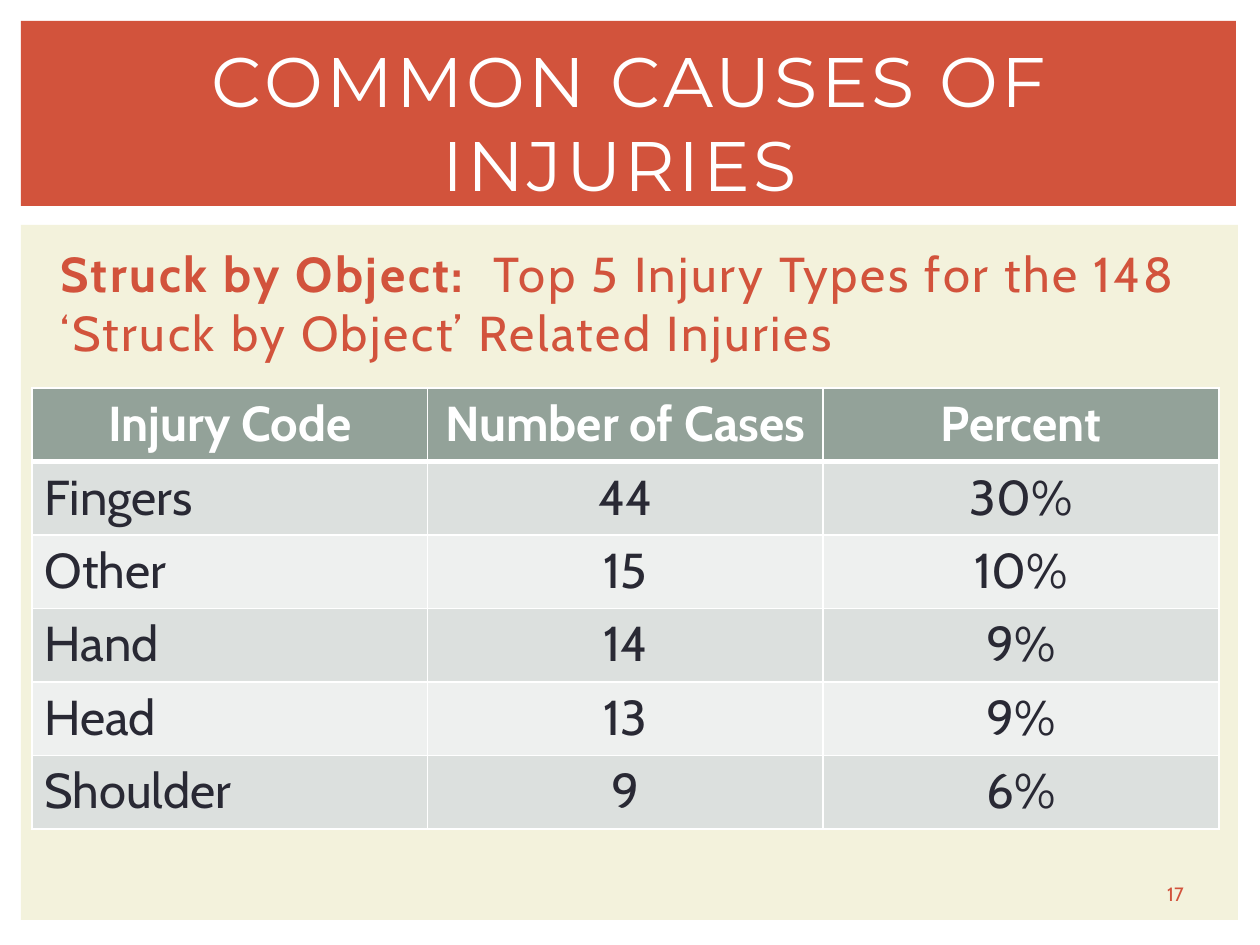
import pptx
import pptx.util
import pptx.dml.color
import pptx.enum.shapes
import pptx.enum.text
import pptx.oxml.ns
import lxml.etree

PX = 914400 // 126
COLORS = {
    "white": "FFFFFF", "cream": "F3F2DC", "red": "D2533C", "ink": "292934",
    "header": "93A299", "band_dark": "DCE0DE", "band_light": "EEF0EF",
}
ALIGN = pptx.enum.text.PP_ALIGN
ANCHOR = pptx.enum.text.MSO_ANCHOR
ROWS = [
    ("Injury Code", "Number of Cases", "Percent"),
    ("Fingers", "44", "30%"),
    ("Other", "15", "10%"),
    ("Hand", "14", "9%"),
    ("Head", "13", "9%"),
    ("Shoulder", "9", "6%"),
]


def emu(*lengths):
    return [pptx.util.Emu(n * PX) for n in lengths]


def rgb(name):
    return pptx.dml.color.RGBColor.from_string(COLORS[name])


def style_run(r, size, color, font="Cabin", bold=False, spacing=0):
    r.font.size = pptx.util.Pt(size)
    r.font.name = font
    r.font.bold = bold
    r.font.color.rgb = rgb(color)
    if spacing:
        r.font._element.set("spc", str(int(spacing * 100)))


def add_panel(s, box, color):
    sp = s.shapes.add_shape(pptx.enum.shapes.MSO_SHAPE.RECTANGLE, *emu(*box))
    sp.shadow.inherit = False
    sp.fill.solid()
    sp.fill.fore_color.rgb = rgb(color)
    sp.line.fill.background()


def add_text(s, box, parts, align=ALIGN.LEFT, anchor=ANCHOR.MIDDLE, **style):
    tf = s.shapes.add_textbox(*emu(*box)).text_frame
    tf.word_wrap = True
    tf.vertical_anchor = anchor
    p = tf.paragraphs[0]
    p.alignment = align
    for text, bold in parts:
        r = p.add_run()
        r.text = text
        style_run(r, bold=bold, **style)
    return p


def add_title(s, box):
    x, y, w, h = box
    add_panel(s, box, "red")
    add_text(s, (x + 32, y + 28, w - 59, h - 41),
             [("COMMON CAUSES OF INJURIES ", False)], ALIGN.CENTER,
             size=40, color="white", font="Montserrat", spacing=2)


def set_borders(cell, bottom):
    tcPr = cell._tc.get_or_add_tcPr()
    for i, (side, width) in enumerate(zip("LRTB", (1, 1, 1, bottom))):
        ln = lxml.etree.Element(pptx.oxml.ns.qn(f"a:ln{side}"),
                                w=str(pptx.util.Pt(width)))
        fill = lxml.etree.SubElement(ln, pptx.oxml.ns.qn("a:solidFill"))
        lxml.etree.SubElement(fill, pptx.oxml.ns.qn("a:srgbClr"),
                              val=COLORS["white"])
        tcPr.insert(i, ln)


def add_injury_table(s, box):
    n_rows, n_cols = len(ROWS), len(ROWS[0])
    x, y, w, h = emu(*box)
    table = s.shapes.add_table(n_rows, n_cols, x, y, w, h).table
    for column in table.columns:
        column.width = w // n_cols
    for i, values in enumerate(ROWS):
        table.rows[i].height = h // n_rows
        is_header = i == 0
        fill = "header" if is_header else ("band_light", "band_dark")[i % 2]
        for j, value in enumerate(values):
            cell = table.cell(i, j)
            cell.fill.solid()
            cell.fill.fore_color.rgb = rgb(fill)
            cell.text_frame.text = value
            p = cell.text_frame.paragraphs[0]
            p.alignment = ALIGN.CENTER if is_header or j else ALIGN.LEFT
            style_run(p.runs[0], 28, "white" if is_header else "ink",
                      bold=is_header)
            set_borders(cell, 3 if i < 1 else 1)
            if i == 1:
                cell._tc.tcPr.find(pptx.oxml.ns.qn("a:lnT")).set(
                    "w", str(pptx.util.Pt(3)))


def add_body(s, box):
    x, y, w, h = box
    add_panel(s, box, "cream")
    p = add_text(s, (x + 21, y + 12, w - 62, 140),
                 [("Struck by Object:  ", True),
                  ("Top 5 Injury Types for the 148 "
                   "‘Struck by Object’ Related Injuries", False)],
                 anchor=ANCHOR.TOP, size=28, color="red", spacing=1.5)
    p._p.get_or_add_pPr().set("marL", str(6 * PX))
    add_injury_table(s, (x + 11, y + 163, w - 30, 441))
    add_text(s, (x + w - 103, y + h - 45, 81, 38), [("17", False)],
             ALIGN.CENTER, size=11, color="red")


def main():
    prs = pptx.Presentation()
    prs.slide_width, prs.slide_height = emu(1260, 945)
    s = prs.slides.add_slide(prs.slide_layouts[6])
    add_body(s, (21, 225, 1217, 695))
    add_title(s, (21, 21, 1215, 185))
    prs.save("out.pptx")


if __name__ == "__main__":
    main()
